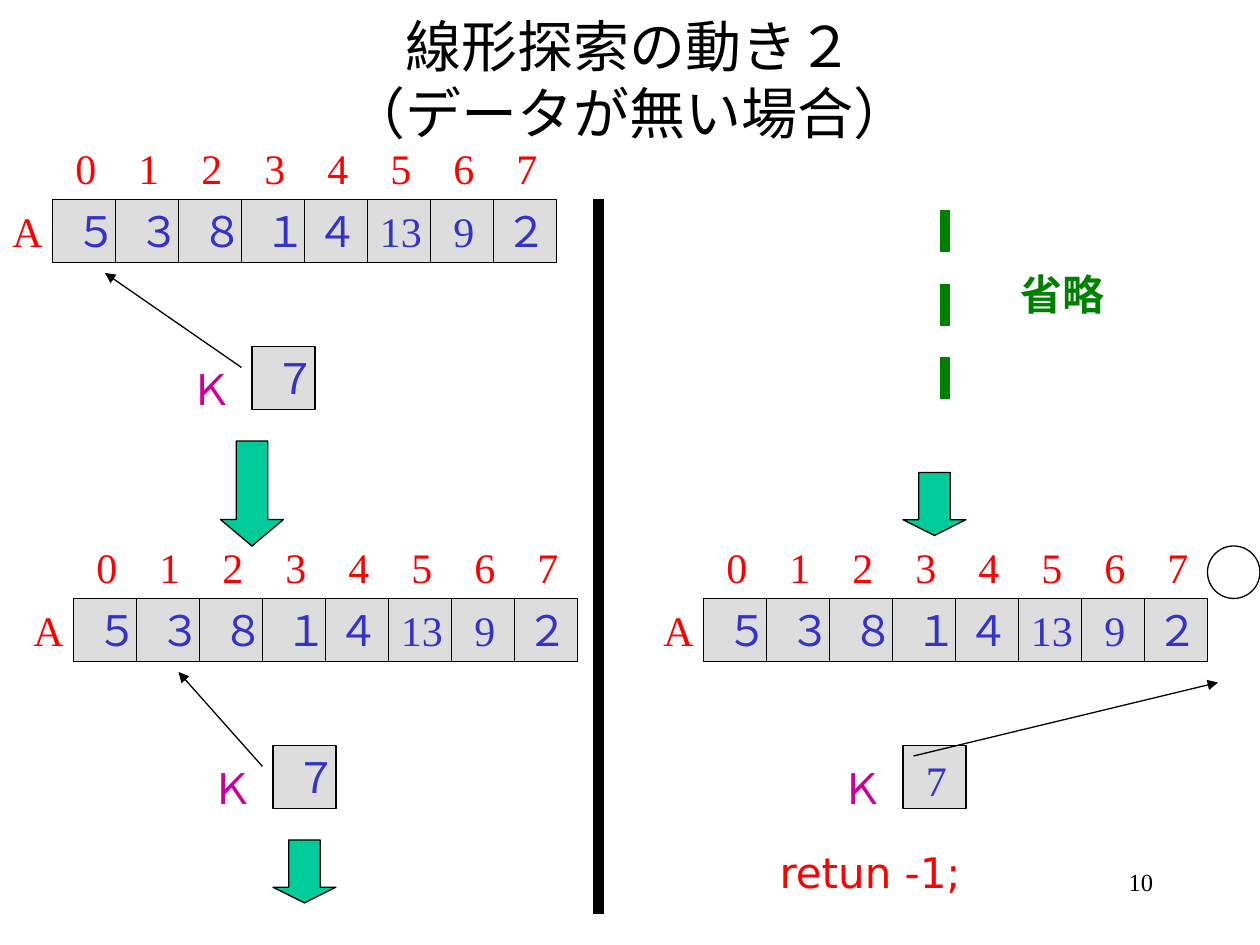
from lxml import etree
from pptx import Presentation
from pptx.dml.color import RGBColor
from pptx.enum.dml import MSO_LINE
from pptx.enum.shapes import MSO_CONNECTOR, MSO_SHAPE
from pptx.enum.text import MSO_ANCHOR, MSO_AUTO_SIZE, PP_ALIGN
from pptx.oxml.ns import qn
from pptx.util import Pt

# Content
TITLE = "線形探索の動き２\v（データが無い場合）"
VALUES = ["５", "３", "８", "１", "４", "13", "9", "２"]
VALUE_INSETS = [6, 6, 6, 6, 0, 0, 6, 0]
VALUE_WIDTHS = [31, 31, 31, 31, 31, 38.5, 27, 31]
WRAPPED = 4  # the first values sit in wrapping boxes
# Array origin, key text, key text drop and width, pointer start and end (from origin)
STEPS = [
    ((30, 114), "７", 0, 31, (108, 96), (30, 42)),
    ((42, 342), "７", 0, 31, (108, 96), (60, 42)),
    ((402, 342), "7", 1.5, 27, (120, 90), (294, 48)),
]
# Left, top, height, head length relative to width
DOWN_ARROWS = [(126, 252, 60, 0.42), (156, 480, 36, 0.25), (516, 270, 36, 0.25)]

CELL = 36
FONT = "Times New Roman"
COLORS = {
    "black": "000000", "cell": "DDDDDD", "index": "FF0000", "value": "3333CC",
    "key": "CC0099", "arrow": "00CC99", "omitted": "008000",
}


def color(name):
    return RGBColor.from_string(COLORS[name])


def set_font(paragraph, size, name, font=FONT, bold=False):
    paragraph.font.size = Pt(size)
    paragraph.font.name = font
    paragraph.font.bold = bold
    paragraph.font.color.rgb = color(name)


def add_label(text, left, top, width, name, size=24, font=FONT,
              align=PP_ALIGN.LEFT, wrap=False, bold=False):
    label = slide.shapes.add_textbox(Pt(left), Pt(top), Pt(width), Pt(CELL))
    frame = label.text_frame
    frame.text = text
    frame.word_wrap = wrap
    frame.auto_size = MSO_AUTO_SIZE.SHAPE_TO_FIT_TEXT
    frame.paragraphs[0].alignment = align
    set_font(frame.paragraphs[0], size, name, font, bold)


def add_figure(shapes, kind, left, top, width, height, fill=None):
    figure = shapes.add_shape(kind, Pt(left), Pt(top), Pt(width), Pt(height))
    figure.shadow.inherit = False
    if fill:
        figure.fill.solid()
        figure.fill.fore_color.rgb = color(fill)
    else:
        figure.fill.background()
    figure.line.color.rgb = color("black")
    figure.line.width = Pt(0.75)
    return figure


def add_line(start, end, width, name="black"):
    line = slide.shapes.add_connector(
        MSO_CONNECTOR.STRAIGHT, *(Pt(length) for length in (*start, *end)))
    line.line.color.rgb = color(name)
    line.line.width = Pt(width)
    etree.SubElement(line._element.spPr, qn("a:effectLst"))
    return line


def add_step(origin, key, key_drop, key_width, start, end):
    x, y = origin
    # Array cells
    cells = slide.shapes.add_group_shape()
    for i in range(len(VALUES)):
        add_figure(cells.shapes, MSO_SHAPE.RECTANGLE, x + i * CELL, y, CELL, CELL, "cell")
    # Array name, indices and values
    add_label("A", x - 30, y, 32, "index")
    for i, (value, inset, width) in enumerate(zip(VALUES, VALUE_INSETS, VALUE_WIDTHS)):
        left = x + i * CELL
        add_label(str(i), left + 6, y - CELL, 27, "index")
        add_label(value, left + inset, y, width, "value", wrap=i < WRAPPED)
    # Key and its pointer
    add_figure(slide.shapes, MSO_SHAPE.RECTANGLE, x + 114, y + 84, CELL, CELL, "cell")
    add_label(key, x + 120, y + 84 + key_drop, key_width, "value")
    add_label("Ｋ", x + 72, y + 90, 32, "key")
    pointer = add_line((x + start[0], y + start[1]), (x + end[0], y + end[1]), 0.75)
    etree.SubElement(pointer.line._get_or_add_ln(), qn("a:tailEnd"), type="triangle")


prs = Presentation()
prs.slide_width, prs.slide_height = Pt(720), Pt(540)
slide = prs.slides.add_slide(prs.slide_layouts[5])

# Title
title = slide.shapes.title
title.left, title.top, title.width, title.height = Pt(54), Pt(0), Pt(612), Pt(90)
title.text_frame.text = TITLE
title.text_frame.auto_size = MSO_AUTO_SIZE.NONE
title.text_frame.vertical_anchor = MSO_ANCHOR.MIDDLE
title.text_frame.paragraphs[0].alignment = PP_ALIGN.CENTER
set_font(title.text_frame.paragraphs[0], 32, "black")

# Search steps
for step in STEPS:
    add_step(*step)

# Arrows between steps
for left, top, height, head in DOWN_ARROWS:
    down_arrow = add_figure(slide.shapes, MSO_SHAPE.DOWN_ARROW, left, top, CELL, height, "arrow")
    down_arrow.adjustments[0] = 0.5
    down_arrow.adjustments[1] = head

# Divider and omitted steps
add_line((342, 114), (342, 522), 6)
omitted = add_line((540, 120), (540, 234), 6, "omitted")
omitted.line.dash_style = MSO_LINE.DASH
add_label("省略", 575.5, 150, 63, "omitted", align=PP_ALIGN.CENTER, bold=True)

# Position past the end, and the result
add_figure(slide.shapes, MSO_SHAPE.OVAL, 690, 312, 30, 30)
add_label("retun -1;", 435, 480, 124.5, "index", font="DejaVu Sans", align=PP_ALIGN.CENTER)

# Page number
add_label("10", 516, 492, 150, "black", size=14, align=PP_ALIGN.RIGHT, wrap=True)

prs.save("out.pptx")
